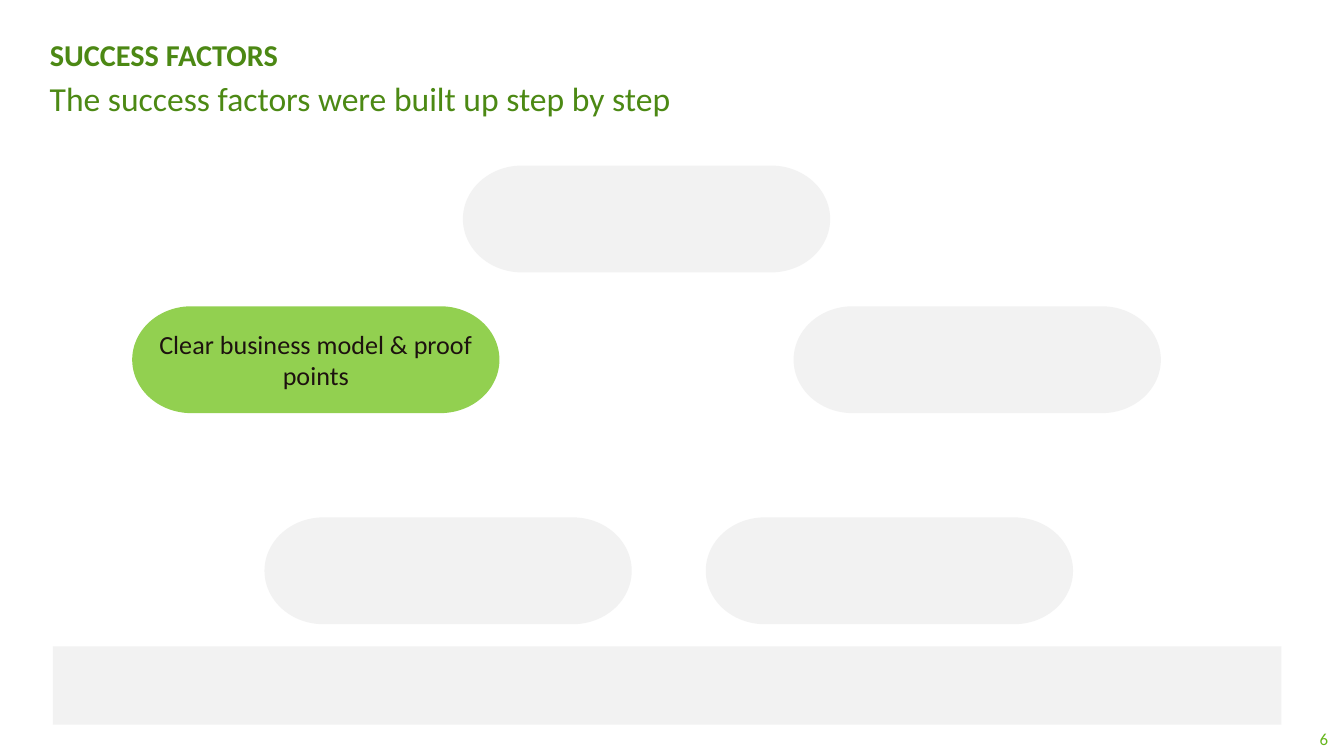
from dataclasses import dataclass

from pptx import Presentation
from pptx.dml.color import RGBColor as Color
from pptx.enum.shapes import MSO_SHAPE as Shape
from pptx.enum.text import MSO_ANCHOR as Anchor, PP_ALIGN as Align
from pptx.util import Cm, Pt


@dataclass(frozen=True)
class Theme:
    font: str = "Calibri"
    title: str = "4C8814"
    subtitle: str = "4C8914"
    number: str = "65B61B"
    ink: str = "1D120F"
    active: str = "92D050"
    muted: str = "F2F2F2"
    title_size: float = 16.2
    subtitle_size: float = 18
    factor_size: float = 14
    number_size: float = 9


THEME = Theme()
PILL_WIDTH, PILL_HEIGHT = 6.94, 2.02
FACTORS = [
    (6.25, 0, ""),
    (12.5, 2.66, ""),
    (10.84, 6.65, ""),
    (2.5, 6.65, ""),
    (0, 2.66, "Clear business model & proof points"),
]


def write(shape, text, size, color, align=Align.LEFT, anchor=Anchor.MIDDLE, bold=False):
    frame = shape.text_frame
    frame.word_wrap = True
    frame.vertical_anchor = anchor
    para = frame.paragraphs[0]
    para.text = text
    para.alignment = align
    para.font.name = THEME.font
    para.font.size = Pt(size)
    para.font.bold = bold
    para.font.color.rgb = Color.from_string(color)


def add_block(page, kind, left, top, width, height, fill):
    block = page.shapes.add_shape(kind, Cm(left), Cm(top), Cm(width), Cm(height))
    block.shadow.inherit = False
    block.fill.solid()
    block.fill.fore_color.rgb = Color.from_string(fill)
    block.line.fill.background()
    return block


def add_heading(page, left, top, width):
    line_height = 0.91
    title = page.shapes.title
    title.left, title.top = Cm(left), Cm(top)
    title.width, title.height = Cm(width), Cm(line_height)
    write(title, "SUCCESS FACTORS", THEME.title_size, THEME.title, bold=True)
    subtitle = page.shapes.add_textbox(
        Cm(left), Cm(top + 0.76), Cm(width), Cm(line_height)
    )
    write(subtitle, "The success factors were built up step by step",
          THEME.subtitle_size, THEME.subtitle, anchor=Anchor.TOP)


def add_factors(page, left, top):
    for across, down, text in FACTORS:
        fill = THEME.active if text else THEME.muted
        pill = add_block(page, Shape.FLOWCHART_TERMINATOR, left + across, top + down,
                         PILL_WIDTH, PILL_HEIGHT, fill)
        if text:
            frame = pill.text_frame
            frame.margin_left = frame.margin_right = Cm(0.18)
            frame.margin_top = frame.margin_bottom = Cm(0.1)
            write(pill, text, THEME.factor_size, THEME.ink, Align.CENTER)


def add_foundation(page, left, top, width, height):
    add_block(page, Shape.RECTANGLE, left, top, width, height, THEME.muted)


def add_page_number(page, left, top, width, height):
    box = page.shapes.add_textbox(Cm(left), Cm(top), Cm(width), Cm(height))
    write(box, "6", THEME.number_size, THEME.number, Align.RIGHT)


def main():
    deck = Presentation()
    deck.slide_width, deck.slide_height = Cm(25.4), Cm(14.29)
    page = deck.slides.add_slide(deck.slide_layouts[5])
    add_heading(page, 0.69, 0.58, 23.44)
    add_factors(page, 2.5, 3.13)
    add_foundation(page, 1, 12.22, 23.22, 1.48)
    add_page_number(page, 19.43, 13.59, 5.92, 0.76)
    deck.save("out.pptx")


if __name__ == "__main__":
    main()
